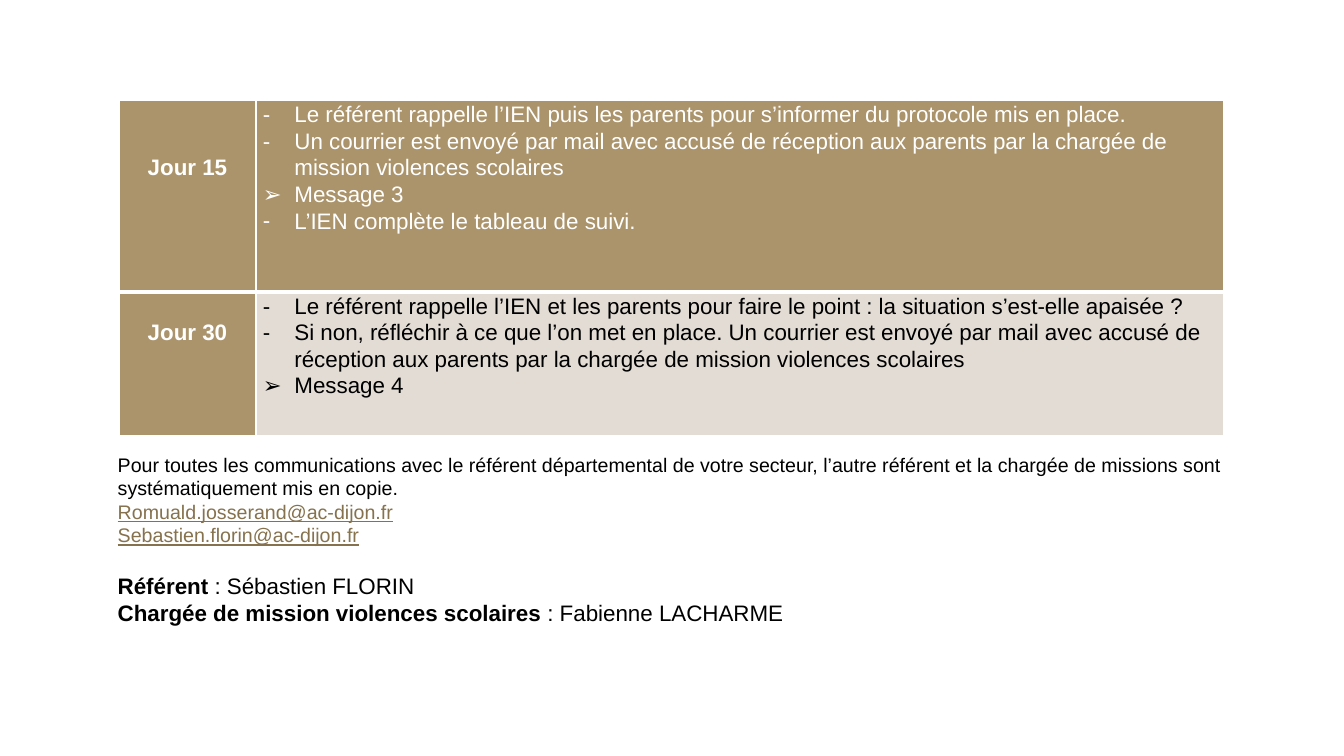
import pptx
import pptx.dml.color
import pptx.enum.text
import pptx.oxml.ns
import pptx.util
from lxml import etree

Pt = pptx.util.Pt
RGBColor = pptx.dml.color.RGBColor
qn = pptx.oxml.ns.qn
PP_ALIGN = pptx.enum.text.PP_ALIGN

TAN = RGBColor(0xAB, 0x94, 0x6B)
BEIGE = RGBColor(0xE2, 0xDC, 0xD4)
LINK_BROWN = RGBColor(0x86, 0x72, 0x4D)
BLACK = RGBColor(0, 0, 0)
WHITE = RGBColor(255, 255, 255)

DASH, ARROW = "-", "➢"
LINE_HEIGHT = 19

# label, blank lines above the label, row height, fill, text colour, steps
days = [
    ("Jour 15", 2, 136.8, TAN, WHITE, [
        (DASH, "Le référent rappelle l’IEN puis les parents pour s’informer du protocole mis en place."),
        (DASH, "Un courrier est envoyé par mail avec accusé de réception aux parents "
               "par la chargée de mission violences scolaires"),
        (ARROW, "Message 3"),
        (DASH, "L’IEN complète le tableau de suivi."),
    ]),
    ("Jour 30", 1, 102, BEIGE, BLACK, [
        (DASH, "Le référent rappelle l’IEN et les parents pour faire le point : "
               "la situation s’est-elle apaisée ?"),
        (DASH, "Si non, réfléchir à ce que l’on met en place. Un courrier est envoyé par mail avec accusé "
               "de réception aux parents par la chargée de mission violences scolaires"),
        (ARROW, "Message 4"),
    ]),
]


def style_cell(cell, fill, border_widths):
    """Set white borders (left, right, top, bottom), fill and margins."""
    properties = cell._tc.get_or_add_tcPr()
    for side, width in zip("LRTB", border_widths):
        line = etree.SubElement(properties, qn(f"a:ln{side}"), w=str(Pt(width)))
        solid = etree.SubElement(line, qn("a:solidFill"))
        etree.SubElement(solid, qn("a:srgbClr"), val=str(WHITE))
    cell.fill.solid()
    cell.fill.fore_color.rgb = fill
    cell.margin_left = cell.margin_right = Pt(5)
    cell.margin_top = cell.margin_bottom = Pt(0)


def style_font(font, size, color, bold=False):
    font.name = "Arial"
    font.size = Pt(size)
    font.color.rgb = color
    font.bold = bold


presentation = pptx.Presentation()
presentation.slide_width = Pt(960)
presentation.slide_height = Pt(540)
slide = presentation.slides.add_slide(presentation.slide_layouts[6])

# Schedule
table = slide.shapes.add_table(2, 2, Pt(85), Pt(72), Pt(789), Pt(238.8)).table
table.columns[0].width = Pt(97.8)
table.columns[1].width = Pt(691.2)

for row, (label, blank_lines, height, fill, color, steps) in enumerate(days):
    table.rows[row].height = Pt(height)
    border_widths = (1, 1, 1, 3) if row == 0 else (1, 1, 3, 1)
    label_cell, steps_cell = table.cell(row, 0), table.cell(row, 1)
    style_cell(label_cell, TAN, border_widths)
    style_cell(steps_cell, fill, border_widths)

    label_cell.margin_top = Pt(blank_lines * LINE_HEIGHT)
    label_cell.text_frame.text = label
    paragraph = label_cell.text_frame.paragraphs[0]
    paragraph.alignment = PP_ALIGN.CENTER
    paragraph.line_spacing = 1.07
    style_font(paragraph.runs[0].font, 16, WHITE, bold=True)

    steps_cell.text_frame.text = "\n".join(text for _, text in steps)
    for paragraph, (bullet, _) in zip(steps_cell.text_frame.paragraphs, steps):
        paragraph.line_spacing = 1.07
        properties = paragraph._p.get_or_add_pPr()
        properties.set("marL", str(Pt(22.5)))
        properties.set("indent", str(-Pt(22.5)))
        etree.SubElement(properties, qn("a:buFont"), typeface="Arial")
        etree.SubElement(properties, qn("a:buChar"), char=bullet)
        style_font(paragraph.runs[0].font, 16, color)

# Contacts
contacts = slide.shapes.add_textbox(Pt(77), Pt(318.2), Pt(821.5), Pt(152.6))
frame = contacts.text_frame
frame.word_wrap = True
frame.auto_size = pptx.enum.text.MSO_AUTO_SIZE.NONE
frame.vertical_anchor = pptx.enum.text.MSO_ANCHOR.MIDDLE
frame.margin_bottom = Pt(22)
emails = ["Romuald.josserand@ac-dijon.fr", "Sebastien.florin@ac-dijon.fr"]
roles = [("Référent", "Sébastien FLORIN"),
         ("Chargée de mission violences scolaires", "Fabienne LACHARME")]

frame.text = ("Pour toutes les communications avec le référent départemental de votre secteur, "
              "l’autre référent et la chargée de missions sont systématiquement mis en copie.")
style_font(frame.paragraphs[0].runs[0].font, 14, BLACK)

for email in emails:
    paragraph = frame.add_paragraph()
    paragraph.text = email
    font = paragraph.runs[0].font
    style_font(font, 14, LINK_BROWN)
    font.underline = True

for index, (role, person) in enumerate(roles):
    paragraph = frame.add_paragraph()
    paragraph.space_before = Pt(18.4 if index == 0 else 0)
    paragraph.text = role
    style_font(paragraph.runs[0].font, 16, BLACK, bold=True)
    run = paragraph.add_run()
    run.text = f" : {person}"
    style_font(run.font, 16, BLACK)

presentation.save("out.pptx")
